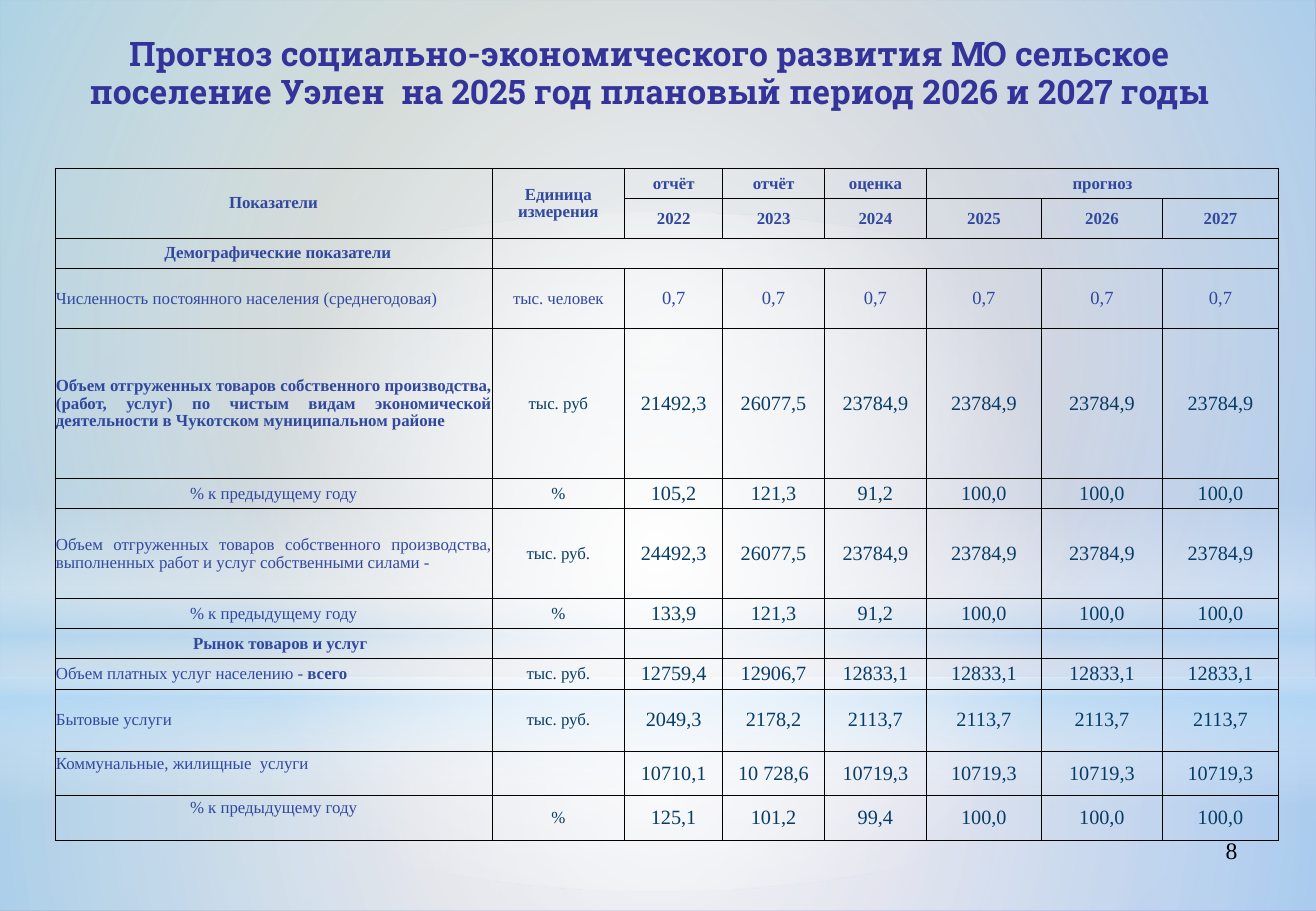
from dataclasses import dataclass

from lxml import etree
from pptx import Presentation
from pptx.dml.color import RGBColor
from pptx.enum.shapes import MSO_SHAPE
from pptx.enum.text import MSO_ANCHOR, PP_ALIGN
from pptx.oxml import parse_xml
from pptx.oxml.ns import nsdecls, qn
from pptx.util import Cm, Pt

LEFT, CENTER, RIGHT, JUSTIFY = PP_ALIGN.LEFT, PP_ALIGN.CENTER, PP_ALIGN.RIGHT, PP_ALIGN.JUSTIFY
MIDDLE, TOP = MSO_ANCHOR.MIDDLE, MSO_ANCHOR.TOP
RECTANGLE, OVAL = MSO_SHAPE.RECTANGLE, MSO_SHAPE.OVAL


@dataclass(frozen=True)
class Theme:
    """Colours, fonts and type sizes of the slide."""
    title_font: str = "Roboto Slab"
    body_font: str = "Times New Roman"
    title: str = "333399"
    label: str = "31489F"
    value: str = "073C65"
    black: str = "000000"
    white: str = "FFFFFF"
    sky: str = "B4DCFA"
    backdrop: tuple = ("96AB94", "8488C4")
    title_size: float = 20
    number_size: float = 14
    value_size: float = 12
    population_size: float = 11
    label_size: float = 10


THEME = Theme()
WIDTH, HEIGHT, HORIZON = 27.53, 19.05, 14.17
TITLE = ("Прогноз социально-экономического развития МО сельское поселение Уэлен  "
         "на 2025 год плановый период 2026 и 2027 годы")
COLUMNS = (9.14, 2.78, 2.05, 2.13, 2.13, 2.41, 2.53, 2.43)
HEADER = (("Показатели", "Единица измерения", "отчёт", "отчёт", "оценка", "прогноз", "", ""),
          ("", "", "2022", "2023", "2024", "2025", "2026", "2027"))
HEADER_HEIGHTS = (0.63, 0.79)
MERGES = ((0, 0, 1, 0), (0, 1, 1, 1), (0, 5, 0, 7), (2, 1, 2, 7))
GROWTH = "% к предыдущему году"
SHIPPED = ("Объем отгруженных товаров собственного производства, (работ, услуг) по чистым видам "
           "экономической деятельности в Чукотском муниципальном районе")
OWN_WORK = ("Объем отгруженных товаров собственного производства, "
            "выполненных работ и услуг собственными силами -")
RAISED = {"margin_bottom": Cm(0.4)}
ROWS = (
    (0.63, [("Демографические показатели", True)], CENTER, {"margin_left": Cm(0.2)}, "", ()),
    (1.26, [("Численность постоянного населения (среднегодовая)", False)], LEFT, {},
     "тыс. человек", ("0,7",) * 6),
    (3.14, [(SHIPPED, True)], JUSTIFY, {}, "тыс. руб",
     ("21492,3", "26077,5") + ("23784,9",) * 4),
    (0.63, [(GROWTH, False)], CENTER, {}, "%", ("105,2", "121,3", "91,2") + ("100,0",) * 3),
    (1.88, [(OWN_WORK, False)], JUSTIFY, {}, "тыс. руб.",
     ("24492,3", "26077,5") + ("23784,9",) * 4),
    (0.63, [(GROWTH, False)], CENTER, {}, "%", ("133,9", "121,3", "91,2") + ("100,0",) * 3),
    (0.63, [("Рынок товаров и услуг", True)], CENTER, {"margin_left": Cm(0.3)}, "", ()),
    (0.63, [("Объем платных услуг населению - ", False), ("всего", True)], LEFT, {},
     "тыс. руб.", ("12759,4", "12906,7") + ("12833,1",) * 4),
    (1.3, [("Бытовые услуги", False)], LEFT, {}, "тыс. руб.",
     ("2049,3", "2178,2") + ("2113,7",) * 4),
    (0.92, [("Коммунальные, жилищные  услуги", False)], LEFT, RAISED, "",
     ("10710,1", "10 728,6") + ("10719,3",) * 4),
    (0.94, [(GROWTH, False)], CENTER, RAISED, "%", ("125,1", "101,2", "99,4") + ("100,0",) * 3),
)
POPULATION_ROW = 1


def apply(target, values):
    """Set every attribute named in a dict of format values."""
    for name, value in values.items():
        setattr(target, name, value)


def write(para, spans, size, color, align=CENTER, font=THEME.body_font, spacing=0.95):
    """Write (text, bold) spans into a paragraph in one type style."""
    apply(para, {"alignment": align, "line_spacing": spacing})
    for text, bold in spans:
        span = para.add_run()
        span.text = text
        apply(span.font, {"name": font, "size": Pt(size), "bold": bold})
        span.font.color.rgb = RGBColor.from_string(color)


def add_text(page, box, spans, anchor, **style):
    """Place a wrapping text box."""
    frame = page.shapes.add_textbox(*map(Cm, box)).text_frame
    apply(frame, {"word_wrap": True, "vertical_anchor": anchor})
    write(frame.paragraphs[0], spans, **style)


def add_glow(page, kind, box, stops, direction):
    """Place a borderless shape filled with a translucent gradient."""
    shape = page.shapes.add_shape(kind, *map(Cm, box))
    shape.shadow.inherit = False
    shape.line.fill.background()
    shape.fill.gradient()
    colors = "".join(
        f'<a:gs pos="{place * 1000}"><a:srgbClr val="{color}">'
        f'<a:alpha val="{opacity * 1000}"/></a:srgbClr></a:gs>'
        for place, color, opacity in stops)
    gradient = parse_xml(f'<a:gradFill {nsdecls("a")} rotWithShape="1">'
                         f'<a:gsLst>{colors}</a:gsLst>{direction}</a:gradFill>')
    properties = shape.element.spPr
    properties.replace(properties.find(qn("a:gradFill")), gradient)


def add_backdrop(page, width, height):
    """Paint the page gradient and the sky glows over it."""
    fill = page.background.fill
    fill.gradient()
    fill.gradient_angle = 315
    for stop, color in zip(fill.gradient_stops, THEME.backdrop):
        stop.color.rgb = RGBColor.from_string(color)
    white, sky = THEME.white, THEME.sky
    radial = ('<a:path path="circle"><a:fillToRect l="50000" t="50000" '
              'r="50000" b="50000"/></a:path>')
    downward = '<a:lin ang="5400000" scaled="0"/>'
    add_glow(page, RECTANGLE, (0, HORIZON, width, height - HORIZON),
             ((0, white, 91), (37, white, 76), (100, sky, 79)), radial)
    add_glow(page, RECTANGLE, (0, 0, width, HORIZON),
             ((0, white, 89), (48, white, 62), (100, sky, 79)), radial)
    add_glow(page, RECTANGLE, (0, 10.46, width, 6.35),
             ((0, white, 0), (29, white, 30), (45, sky, 40),
              (55, white, 26), (65, sky, 60), (100, white, 0)), downward)
    add_glow(page, OVAL, (0, 4.45, width, HORIZON), ((0, white, 100), (56, white, 0)), radial)


def format_cell(cell):
    """Give a cell thin black borders, no fill, tight margins and a small empty line."""
    apply(cell, {"vertical_anchor": MIDDLE, "margin_left": Cm(0.02), "margin_right": Cm(0.02),
                 "margin_top": Cm(0.02), "margin_bottom": 0})
    cell.fill.background()
    properties = cell._tc.get_or_add_tcPr()
    for index, side in enumerate(("lnL", "lnR", "lnT", "lnB")):
        properties.insert(index, parse_xml(
            f'<a:{side} {nsdecls("a")} w="{Pt(0.5)}"><a:solidFill>'
            f'<a:srgbClr val="{THEME.black}"/></a:solidFill></a:{side}>'))
    ending = etree.SubElement(cell.text_frame.paragraphs[0]._p, qn("a:endParaRPr"))
    ending.set("sz", str(THEME.label_size * 100))


def add_forecast(page, left, top):
    """Build the forecast table from its header and indicator rows."""
    heights = HEADER_HEIGHTS + tuple(row[0] for row in ROWS)
    table = page.shapes.add_table(len(heights), len(COLUMNS), Cm(left), Cm(top),
                                  Cm(sum(COLUMNS)), Cm(sum(heights))).table
    apply(table, {"first_row": False, "horz_banding": False})
    for column, width in zip(table.columns, COLUMNS):
        column.width = Cm(width)
    for row, height in zip(table.rows, heights):
        row.height = Cm(height)
    for cell in table.iter_cells():
        format_cell(cell)
    for first_row, first_column, last_row, last_column in MERGES:
        table.cell(first_row, first_column).merge(table.cell(last_row, last_column))

    def put(row, column, spans, size, color, align=CENTER):
        """Write spans into one table cell."""
        write(table.cell(row, column).text_frame.paragraphs[0], spans, size, color, align)

    for row, texts in enumerate(HEADER):
        for column, text in enumerate(texts):
            if text:
                put(row, column, [(text, True)], THEME.label_size, THEME.label)
    for index, (_, label, align, margins, unit, values) in enumerate(ROWS):
        row = index + len(HEADER)
        population = index == POPULATION_ROW
        color = THEME.label if population else THEME.value
        size = THEME.population_size if population else THEME.value_size
        put(row, 0, label, THEME.label_size, THEME.label, align)
        apply(table.cell(row, 0), margins)
        if unit:
            put(row, 1, [(unit, False)], THEME.label_size, color)
        for column, value in enumerate(values, 2):
            put(row, column, [(value, False)], size, color)


def main():
    """Build the deck and save it."""
    deck = Presentation()
    apply(deck, {"slide_width": Cm(WIDTH), "slide_height": Cm(HEIGHT)})
    page = deck.slides.add_slide(deck.slide_layouts[6])
    add_backdrop(page, WIDTH, HEIGHT)
    add_text(page, (19.71, 17.35, 6.43, 1.32), [("8", False)], TOP, size=THEME.number_size,
             color=THEME.black, align=RIGHT, spacing=1.0)
    add_text(page, (0.79, 0.58, 25.6, 1.96), [(TITLE, True)], MIDDLE, size=THEME.title_size,
             color=THEME.title, font=THEME.title_font, spacing=0.93)
    add_forecast(page, 1.15, 3.52)
    deck.save("out.pptx")


if __name__ == "__main__":
    main()
